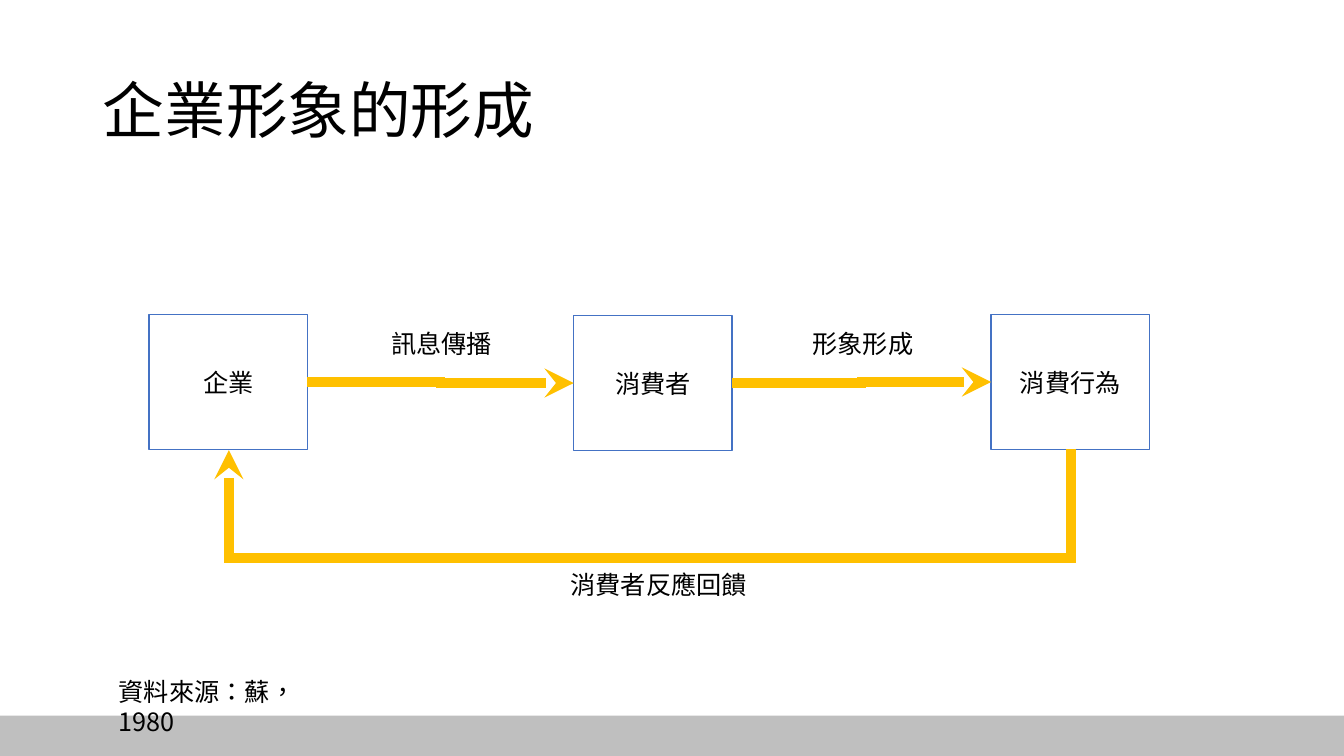
from typing import NamedTuple

from lxml.etree import SubElement
from pptx import Presentation
from pptx.dml.color import RGBColor
from pptx.enum.shapes import MSO_CONNECTOR, MSO_SHAPE
from pptx.enum.text import MSO_ANCHOR, PP_ALIGN
from pptx.oxml.ns import qn
from pptx.util import Pt

PX = 9144
FONT = "Noto Sans CJK TC"
BLACK, WHITE, BLUE, GOLD, GREY = "000000", "FFFFFF", "4472C4", "FFC000", "BFBFBF"
BOX_W, BOX_H = 157, 134
TOP, LEFT, BOTTOM, RIGHT = range(4)


class Stage(NamedTuple):
    """A framed stage of the process."""
    text: str
    x: int
    y: int


class Label(NamedTuple):
    """A free caption."""
    text: str
    x: int
    y: int
    w: int
    wrap: bool = False


STAGES = [Stage("企業", 148, 312), Stage("消費者", 569, 313), Stage("消費行為", 983, 312)]
LABELS = [
    Label("訊息傳播", 378, 321, 121),
    Label("形象形成", 796, 321, 121),
    Label("消費者反應回饋", 556, 560, 197),
    Label("資料來源：蘇，1980", 108, 666, 247, True),
]


def px(*values: int) -> list[int]:
    """Turn px lengths into EMU."""
    return [v * PX for v in values]


def color(value: str) -> RGBColor:
    """Turn a hex string into a colour."""
    return RGBColor.from_string(value)


def write(tf, text: str, size: int, align=PP_ALIGN.LEFT) -> None:
    """Fill a text frame with one formatted paragraph."""
    p = tf.paragraphs[0]
    p.text = text
    p.alignment = align
    p.runs[0].font._element.set("lang", "zh-TW")
    font = p.font
    font.name, font.size = FONT, Pt(size)
    font.color.rgb = color(BLACK)
    SubElement(font._element, qn("a:ea"), typeface=FONT)


def add_rect(slide, x: int, y: int, w: int, h: int, fill: str, line: str = ""):
    """Draw a flat rectangle, outlined if a line colour is given."""
    sp = slide.shapes.add_shape(MSO_SHAPE.RECTANGLE, *px(x, y, w, h))
    sp.shadow.inherit = False
    sp.fill.solid()
    sp.fill.fore_color.rgb = color(fill)
    if line:
        sp.line.color.rgb = color(line)
        sp.line.width = Pt(1)
    else:
        sp.line.fill.background()
    return sp


def add_stage(slide, stage: Stage):
    """Draw a stage box with centred text."""
    sp = add_rect(slide, stage.x, stage.y, BOX_W, BOX_H, WHITE, BLUE)
    tf = sp.text_frame
    tf.word_wrap = False
    tf.vertical_anchor = MSO_ANCHOR.MIDDLE
    write(tf, stage.text, 18, PP_ALIGN.CENTER)
    return sp


def add_label(slide, label: Label) -> None:
    """Place a caption."""
    tf = slide.shapes.add_textbox(*px(label.x, label.y, label.w, 40)).text_frame
    tf.word_wrap = label.wrap
    write(tf, label.text, 18)


def add_arrow(slide, begin, begin_site: int, end, end_site: int):
    """Join two boxes with a thick elbow arrow."""
    cxn = slide.shapes.add_connector(MSO_CONNECTOR.ELBOW, 0, 0, 0, 0)
    cxn.begin_connect(begin, begin_site)
    cxn.end_connect(end, end_site)
    cxn.line.color.rgb = color(GOLD)
    cxn.line.width = Pt(7)
    ln = cxn.line._get_or_add_ln()
    SubElement(ln, qn("a:miter"), lim="800000")
    SubElement(ln, qn("a:tailEnd"), type="stealth")
    SubElement(cxn._element.spPr, qn("a:effectLst"))
    return cxn


def add_feedback(slide, begin, end, drop: int) -> None:
    """Draw an arrow that returns below the boxes, reaching drop px down."""
    cxn = add_arrow(slide, begin, BOTTOM, end, BOTTOM)
    span = begin.left - end.left
    cxn.left = end.left + (end.width + span) // 2
    cxn.top = end.top + end.height - span // 2
    cxn.width, cxn.height = PX, span
    xfrm = cxn._element.spPr.find(qn("a:xfrm"))
    for flip in ("flipH", "flipV"):
        xfrm.attrib.pop(flip, None)
    xfrm.set("rot", "5400000")
    guides = cxn._element.spPr.find(qn("a:prstGeom")).get_or_add_avLst()
    SubElement(guides, qn("a:gd"), name="adj1", fmla=f"val {drop * 100000}")


def main() -> None:
    """Build the slide."""
    prs = Presentation()
    prs.slide_width, prs.slide_height = px(1333, 750)
    slide = prs.slides.add_slide(prs.slide_layouts[5])
    add_rect(slide, 0, 710, 1333, 40, GREY)
    title = slide.shapes.title
    title.left, title.top, title.width, title.height = px(92, 40, 1150, 145)
    title.text_frame.vertical_anchor = MSO_ANCHOR.MIDDLE
    write(title.text_frame, "企業形象的形成", 44)
    title.text_frame.paragraphs[0].line_spacing = 0.9
    company, consumer, behaviour = [add_stage(slide, s) for s in STAGES]
    add_feedback(slide, behaviour, company, 110)
    add_arrow(slide, company, RIGHT, consumer, LEFT)
    add_arrow(slide, consumer, RIGHT, behaviour, LEFT)
    for label in LABELS:
        add_label(slide, label)
    prs.save("out.pptx")


if __name__ == "__main__":
    main()
